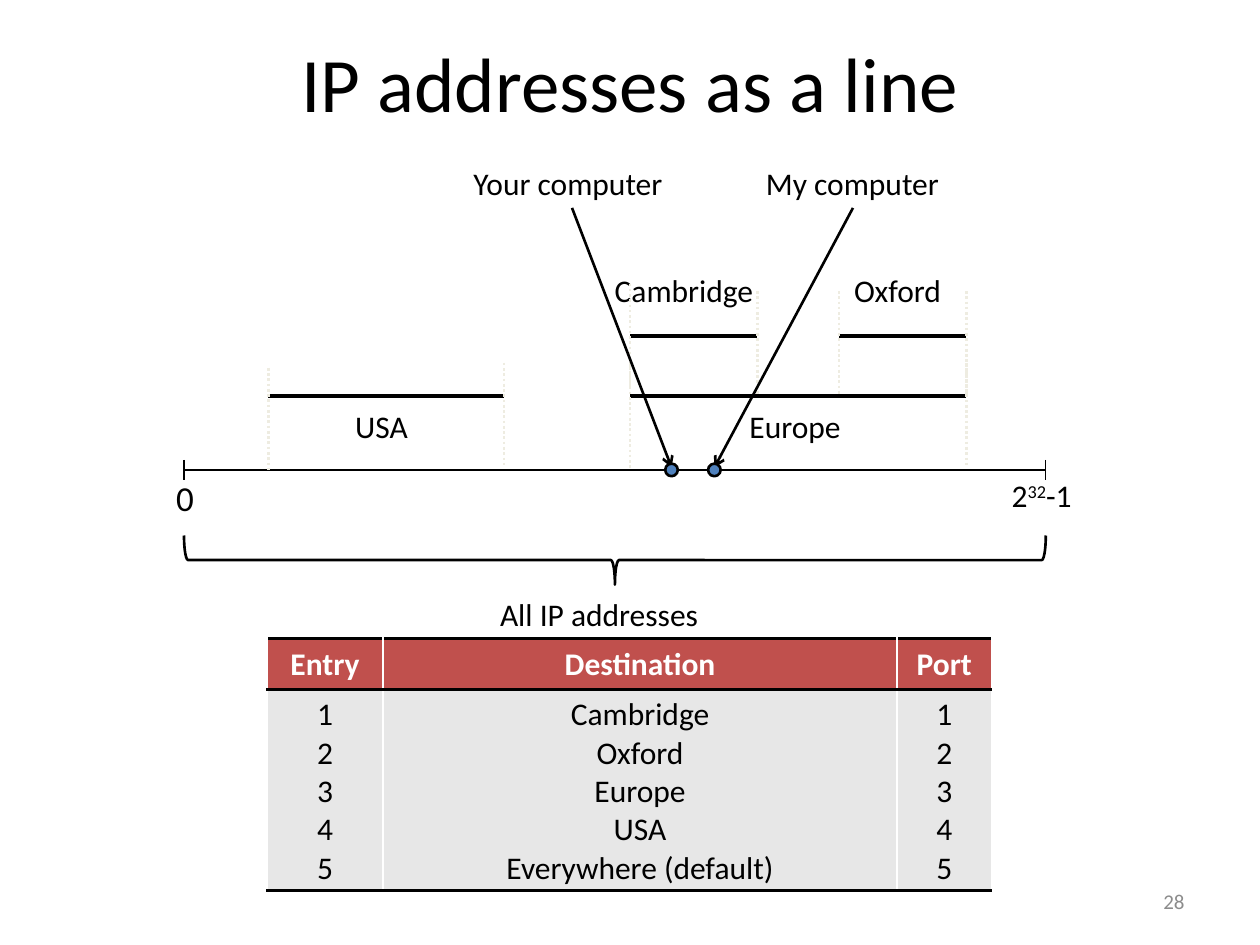
import pptx
import pptx.util
import pptx.dml.color
import pptx.enum.dml
import pptx.enum.shapes
import pptx.enum.text
import pptx.oxml
import pptx.oxml.ns

PX = 9144
FONT = "Calibri"
SHAPE = pptx.enum.shapes.MSO_SHAPE
ALIGN = pptx.enum.text.PP_ALIGN
ANCHOR = pptx.enum.text.MSO_ANCHOR
qn = pptx.oxml.ns.qn


def emu(*px):
    return [pptx.util.Emu(round(v * PX)) for v in px]


def rgb(value):
    return pptx.dml.color.RGBColor.from_string(value)


def add_run(p, text, size=18, color="000000", bold=False):
    r = p.add_run()
    r.text = text
    r.font.name = FONT
    r.font.size = pptx.util.Pt(size)
    r.font.bold = bold
    r.font.color.rgb = rgb(color)
    return r


def add_label(shapes, box, text="", size=18):
    sp = shapes.add_textbox(*emu(*box))
    tf = sp.text_frame
    tf.word_wrap = False
    tf.auto_size = pptx.enum.text.MSO_AUTO_SIZE.SHAPE_TO_FIT_TEXT
    p = tf.paragraphs[0]
    if text:
        add_run(p, text, size)
    return p


def add_line(shapes, x1, y1, x2, y2, width, color="000000", dotted=False, arrow=False):
    straight = pptx.enum.shapes.MSO_CONNECTOR.STRAIGHT
    c = shapes.add_connector(straight, *emu(x1, y1, x2, y2))
    c.line.width = pptx.util.Pt(width)
    c.line.color.rgb = rgb(color)
    if dotted:
        c.line.dash_style = pptx.enum.dml.MSO_LINE.ROUND_DOT
    if arrow:
        ln = c.line._get_or_add_ln()
        ln.append(ln.makeelement(qn("a:tailEnd"), {"type": "arrow"}))
    pr = c._element.spPr
    pr.append(pr.makeelement(qn("a:effectLst"), {}))


def add_outlined(shapes, kind, box, fill=None):
    sp = shapes.add_shape(kind, *emu(*box))
    sp.shadow.inherit = False
    if fill:
        sp.fill.solid()
        sp.fill.fore_color.rgb = rgb(fill)
    else:
        sp.fill.background()
    sp.line.color.rgb = rgb("000000")
    sp.line.width = pptx.util.Pt(1.5)
    return sp


def title(s, box, text):
    sp = s.shapes.title
    sp.left, sp.top, sp.width, sp.height = emu(*box)
    tf = sp.text_frame
    tf.vertical_anchor = ANCHOR.MIDDLE
    p = tf.paragraphs[0]
    p.alignment = ALIGN.CENTER
    add_run(p, text, 44)


def axis(s, box):
    x, y, w, h = box
    mid = y + h / 2
    add_line(s.shapes, x, mid, x + w, mid, 0.75)
    for end in (x, x + w):
        add_line(s.shapes, end, y, end, y + h, 0.75)
    add_label(s.shapes, (x - 16, mid, 34, 44), "0", 20)
    p = add_label(s.shapes, (x + w - 37, mid, 78, 40))
    add_run(p, "2")
    r = add_run(p, "32")
    r.font._element.set("baseline", "30000")
    add_run(p, "-1")


def whole_range(s, box, text):
    x, y, w, h = box
    g = s.shapes.add_group_shape().shapes
    add_label(g, (x + 241, y + h + 3, 179, 40), text)
    cx, cy = x + w / 2, y + h / 2
    sp = add_outlined(g, SHAPE.RIGHT_BRACE, (cx - h / 2, cy - w / 2, h, w))
    sp.rotation = 90
    sp.adjustments[0] = 0.083
    sp.adjustments[1] = 0.5


def address_range(s, box, text, label, bar, left_drop=0, right_drop=0):
    x, y, w, h = box
    dx, dy, lw = label
    g = s.shapes.add_group_shape().shapes
    add_label(g, (x + dx, y + dy, lw, 40), text)
    add_line(g, x, y + bar, x + w, y + bar, 2.25)
    for side, drop in ((x, left_drop), (x + w, right_drop)):
        add_line(g, side, y + drop, side, y + drop + h, 1.5, "EEECE1", dotted=True)


def computer(s, box, text, start, dot):
    x, y, w, h = box
    g = s.shapes.add_group_shape().shapes
    add_label(g, (x, y, w, 40), text)
    add_line(g, x + start, y + 40, x + dot, y + h, 1.5, arrow=True)
    add_outlined(g, SHAPE.OVAL, (x + dot - 5, y + h - 3, 10, 10), "4F81BD")


def set_border(cell, side):
    pr = cell._tc.get_or_add_tcPr()
    ln = pptx.oxml.parse_xml(
        '<a:%s xmlns:a="http://schemas.openxmlformats.org/drawingml/2006/main" w="25400">'
        '<a:solidFill><a:srgbClr val="000000"/></a:solidFill></a:%s>' % (side, side))
    pr.insert(len(pr.findall(qn("a:lnT"))), ln)


def routing_table(s, box, widths, heights, rows):
    t = s.shapes.add_table(len(rows), len(widths), *emu(*box)).table
    t.horz_banding = False
    for col, w in zip(t.columns, emu(*widths)):
        col.width = w
    for row, h in zip(t.rows, emu(*heights)):
        row.height = h
    for i, row in enumerate(rows):
        head = i == 0
        for j, lines in enumerate(row):
            cell = t.cell(i, j)
            cell.fill.solid()
            cell.fill.fore_color.rgb = rgb("C0504D" if head else "E7E7E7")
            tf = cell.text_frame
            for k, text in enumerate(lines):
                p = tf.add_paragraph() if k else tf.paragraphs[0]
                p.alignment = ALIGN.CENTER
                add_run(p, text, 18, "FFFFFF" if head else "000000", head)
            set_border(cell, "lnT")
            set_border(cell, "lnB")


def page_number(s, box, text):
    tf = s.shapes.add_textbox(*emu(*box)).text_frame
    tf.word_wrap = True
    tf.vertical_anchor = ANCHOR.MIDDLE
    p = tf.paragraphs[0]
    p.alignment = ALIGN.RIGHT
    add_run(p, text, 12, "8C8C8C")


def main():
    prs = pptx.Presentation()
    prs.slide_width, prs.slide_height = emu(1000, 750)
    s = prs.slides.add_slide(prs.slide_layouts[5])
    title(s, (50, 2, 900, 125), "IP addresses as a line")
    axis(s, (146, 365, 684, 16))
    numbers = [str(n) for n in range(1, 6)]
    places = ["Cambridge", "Oxford", "Europe", "USA", "Everywhere (default)"]
    routing_table(s, (212, 507, 575, 200), (92, 408, 75), (40, 160),
                  [[["Entry"], ["Destination"], ["Port"]], [numbers, places, numbers]])
    whole_range(s, (146, 425, 684, 39), "All IP addresses")
    address_range(s, (500, 288, 267, 83), "Europe", (85, 30, 94), 26, left_drop=2)
    address_range(s, (213, 288, 187, 83), "USA", (59, 30, 63), 26, left_drop=4)
    address_range(s, (666, 231, 101, 83), "Oxford", (2, -21, 91), 36)
    address_range(s, (500, 225, 101, 83), "Cambridge", (-22, -15, 131), 42, right_drop=6)
    computer(s, (366, 125, 174, 246), "Your computer", 88, 167)
    computer(s, (598, 125, 159, 246), "My computer", 79, -31)
    page_number(s, (717, 695, 233, 40), "28")
    prs.save("out.pptx")


if __name__ == "__main__":
    main()
